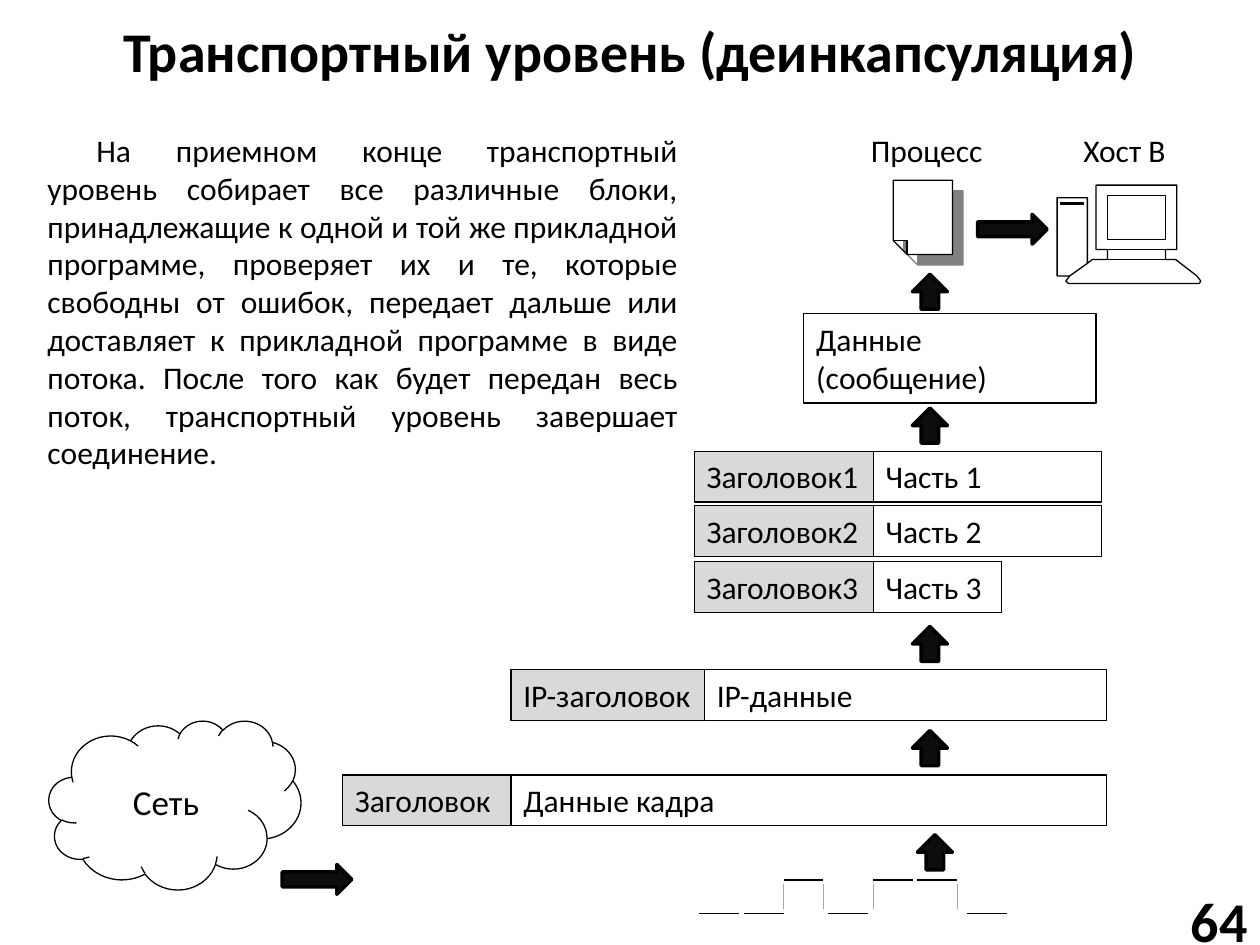
from lxml import etree
from pptx import Presentation
from pptx.dml.color import RGBColor
from pptx.enum.shapes import MSO_CONNECTOR, MSO_SHAPE
from pptx.enum.text import MSO_ANCHOR, PP_ALIGN
from pptx.oxml.ns import qn
from pptx.util import Pt

RECTANGLE, CLOUD = MSO_SHAPE.RECTANGLE, MSO_SHAPE.CLOUD
UP_ARROW, RIGHT_ARROW = MSO_SHAPE.UP_ARROW, MSO_SHAPE.RIGHT_ARROW
STRAIGHT = MSO_CONNECTOR.STRAIGHT
TOP, MIDDLE = MSO_ANCHOR.TOP, MSO_ANCHOR.MIDDLE
LEFT, CENTER, RIGHT, JUSTIFY = (PP_ALIGN.LEFT, PP_ALIGN.CENTER,
                                PP_ALIGN.RIGHT, PP_ALIGN.JUSTIFY)

FONT = "Calibri"
BLACK, WHITE, HEADER_GRAY = "000000", "FFFFFF", "D9D9D9"
ARROW_FILL, SIGNAL_GRAY, SHADOW_GRAY = "0D0D0D", "A6A6A6", "808080"

TITLE = "Транспортный уровень (деинкапсуляция)"
PAGE_NUMBER = "64"
BODY = (
    "На приемном конце транспортный уровень собирает все различные блоки, "
    "принадлежащие к одной и той же прикладной программе, проверяет их и те, "
    "которые свободны от ошибок, передает дальше или доставляет к прикладной "
    "программе в виде потока. После того как будет передан весь поток, "
    "транспортный уровень завершает соединение."
)
LABELS = [("Процесс", 490.5, 82), ("Хост B", 612, 68)]  # text, left, width

# header, data, top, left edge, split, right edge
PACKETS = [
    ("Заголовок1", "Часть 1", 257.8, 396.7, 499, 629.3),
    ("Заголовок2", "Часть 2", 289, 396.7, 499, 629.3),
    ("Заголовок3", "Часть 3", 321, 396.7, 499, 572.4),
    ("IP-заголовок", "IP-данные", 382.5, 292, 402.5, 632.2),
    ("Заголовок", "Данные кадра", 442.8, 195.8, 292, 632.2),
]
PACKET_HEIGHT = 29.1

UP_ARROWS = [(521.4, 156.7), (521.4, 233.2), (521.4, 358), (521.4, 417.5),
             (524.3, 477)]
RIGHT_ARROWS = [(558.6, 122.5), (161.3, 494)]

SIGNAL_HIGH, SIGNAL_LOW, SIGNAL_STEP = 502.8, 522.2, 22.7
HIGH_STARTS = [447.8, 499, 524.2]
LOW_STARTS = [399.6, 425.2, 473.3, 552.7]
SIGNAL_EDGES = [447.8, 470.7, 499, 547.2]

# Each contour: points, closed
COMPUTER = [
    ([(621.4, 150.5), (624.2, 148.3), (632.9, 148.3), (632.9, 142.6),
      (626.4, 142.6), (626.4, 105.8), (672.5, 105.8), (672.5, 142.6),
      (666, 142.6), (666, 148.3), (671.8, 148.3), (684, 157.7),
      (686.2, 160.6), (685.4, 162), (610.6, 162), (609.1, 160.6),
      (611.3, 157.7), (604.1, 157.7), (604.1, 113), (621.4, 113)], True),
    ([(621.4, 150.5), (611.3, 157.7)], False),
    ([(632.9, 111.6), (666, 111.6), (666, 136.8), (632.9, 136.8)], True),
    ([(606.2, 115.9), (619.2, 115.9), (619.2, 116.6), (606.2, 116.6)], True),
    ([(632.9, 142.6), (666, 142.6), (666, 148.3), (632.9, 148.3)], True),
]
DOCUMENT = [
    ([(510.5, 103), (544.3, 103), (544.3, 145.4), (518.4, 145.4),
      (510.5, 137.5)], True),
    ([(510.5, 137.5), (518.4, 137.5), (518.4, 145.4)], False),
]


def color(value):
    return RGBColor.from_string(value)


def write(shape, text, size=18, bold=False, align=LEFT, anchor=TOP, indent=0):
    frame = shape.text_frame
    frame.word_wrap = True
    frame.vertical_anchor = anchor
    para = frame.paragraphs[0]
    para.alignment = align
    if indent:
        para._p.get_or_add_pPr().set("indent", str(Pt(indent)))
    span = para.add_run()
    span.text = text
    span.font.name = FONT
    span.font.size = Pt(size)
    span.font.bold = bold
    span.font.color.rgb = color(BLACK)


def add_text(page, text, left, top, width, height, **style):
    box = page.shapes.add_textbox(Pt(left), Pt(top), Pt(width), Pt(height))
    write(box, text, **style)


def paint(shape, fill=WHITE, weight=0.75):
    shape.shadow.inherit = False
    shape.fill.solid()
    shape.fill.fore_color.rgb = color(fill)
    shape.line.color.rgb = color(BLACK)
    shape.line.width = Pt(weight)


def add_figure(page, kind, left, top, width, height, fill=WHITE, weight=0.75):
    figure = page.shapes.add_shape(kind, Pt(left), Pt(top), Pt(width), Pt(height))
    paint(figure, fill, weight)
    return figure


def add_drawing(page, contours):
    """Draw all contours as one freeform."""
    builder = None
    for points, closed in contours:
        (x, y), *rest = [(Pt(px), Pt(py)) for px, py in points]
        if builder is None:
            builder = page.shapes.build_freeform(x, y, scale=1.0)
        else:
            builder.move_to(x, y)
        builder.add_line_segments(rest, close=closed)
    drawing = builder.convert_to_shape()
    paint(drawing)
    return drawing


def add_hard_shadow(shape, distance):
    effects = shape._element.spPr.find(qn("a:effectLst"))
    shadow = etree.SubElement(effects, qn("a:outerShdw"), blurRad="0",
                              dist=str(Pt(distance)), dir="2700000",
                              algn="ctr", rotWithShape="0")
    etree.SubElement(shadow, qn("a:srgbClr"), val=SHADOW_GRAY)


def add_line(page, x1, y1, x2, y2, stroke=BLACK):
    line = page.shapes.add_connector(STRAIGHT, Pt(x1), Pt(y1), Pt(x2), Pt(y2))
    line.line.color.rgb = color(stroke)
    line.line.width = Pt(0.75)
    etree.SubElement(line._element.spPr, qn("a:effectLst"))


def add_signal(page):
    for level, starts in ((SIGNAL_HIGH, HIGH_STARTS), (SIGNAL_LOW, LOW_STARTS)):
        for x in starts:
            add_line(page, x, level, x + SIGNAL_STEP, level)
    for x in SIGNAL_EDGES:
        add_line(page, x, SIGNAL_HIGH + 2.5, x, SIGNAL_LOW - 2.5, SIGNAL_GRAY)


def main():
    deck = Presentation()
    deck.slide_width, deck.slide_height = Pt(720), Pt(540)
    page = deck.slides.add_slide(deck.slide_layouts[6])

    add_text(page, TITLE, 20, 3.6, 680.5, 49.7, size=32, bold=True,
             align=CENTER, anchor=MIDDLE)
    add_text(page, PAGE_NUMBER, 638, 511.2, 82, 28.8, size=32, bold=True,
             align=RIGHT, anchor=MIDDLE)
    add_text(page, BODY, 20, 71.3, 374.4, 203.8, align=JUSTIFY, indent=28)
    for text, left, width in LABELS:
        add_text(page, text, left, 71.3, width, PACKET_HEIGHT)

    network = add_figure(page, CLOUD, 28, 411.8, 144, 96.5)
    write(network, "Сеть", size=20, align=CENTER, anchor=MIDDLE)
    add_drawing(page, COMPUTER)
    add_hard_shadow(add_drawing(page, DOCUMENT), 8.5)

    message = add_figure(page, RECTANGLE, 459.3, 179.3, 167, 51)
    write(message, "Данные (сообщение)")
    for header, data, top, left, split, right in PACKETS:
        for text, start, end, fill in ((data, split, right, WHITE),
                                       (header, left, split, HEADER_GRAY)):
            cell = add_figure(page, RECTANGLE, start, top, end - start,
                              PACKET_HEIGHT, fill)
            write(cell, text)

    for kind, width, height, places in ((UP_ARROW, 20, 20, UP_ARROWS),
                                        (RIGHT_ARROW, 39.7, 17, RIGHT_ARROWS)):
        for left, top in places:
            add_figure(page, kind, left, top, width, height, ARROW_FILL, 2)
    add_signal(page)

    deck.save("out.pptx")


if __name__ == "__main__":
    main()
